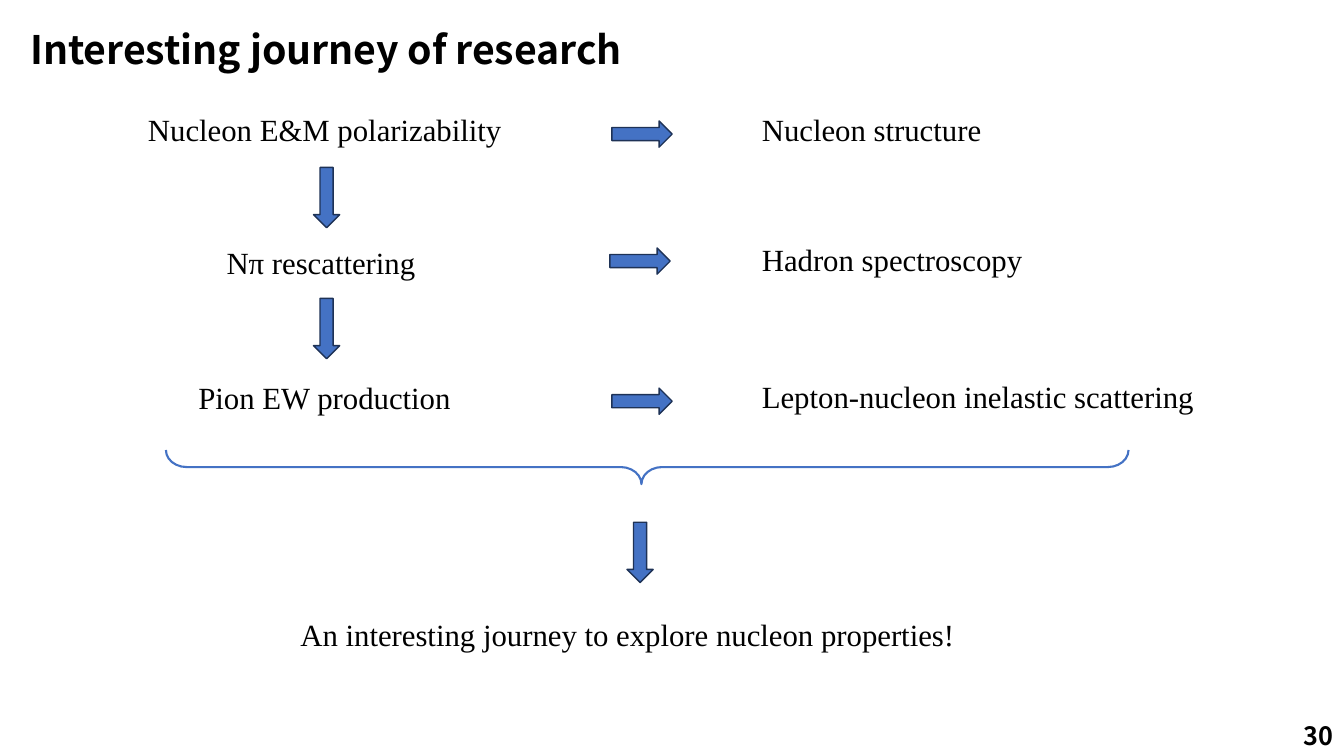
import pptx
import pptx.util
import pptx.dml.color
import pptx.enum.shapes
import pptx.enum.text
from dataclasses import dataclass

Cm, Pt = pptx.util.Cm, pptx.util.Pt
RGB = pptx.dml.color.RGBColor
MSO = pptx.enum.shapes.MSO_SHAPE
ALIGN = pptx.enum.text.PP_ALIGN
ANCHOR = pptx.enum.text.MSO_ANCHOR
AUTO = pptx.enum.text.MSO_AUTO_SIZE


@dataclass(frozen=True)
class Theme:
    ink: RGB = RGB(0x00, 0x00, 0x00)
    blue: RGB = RGB(0x44, 0x72, 0xC4)
    navy: RGB = RGB(0x1E, 0x32, 0x56)
    heading_font: str = "Noto Sans CJK SC"
    body_font: str = "Times New Roman"
    title_size: int = 28
    body_size: int = 22
    number_size: int = 18


theme = Theme()

prs = pptx.Presentation()
prs.slide_width, prs.slide_height = Cm(33.87), Cm(19.05)
s = prs.slides.add_slide(prs.slide_layouts[6])


def add_text(text, x, y, w, h=1.19, font=theme.body_font, size=theme.body_size,
             bold=False, wrap=False, align=ALIGN.LEFT, anchor=ANCHOR.TOP, spacing=None):
    tf = s.shapes.add_textbox(Cm(x), Cm(y), Cm(w), Cm(h)).text_frame
    tf.word_wrap = wrap
    tf.auto_size = AUTO.NONE if wrap else AUTO.SHAPE_TO_FIT_TEXT
    tf.vertical_anchor = anchor
    p = tf.paragraphs[0]
    p.alignment = align
    p.line_spacing = spacing
    r = p.add_run()
    r.text = text
    r.font.name, r.font.size, r.font.bold = font, Pt(size), bold
    r.font.color.rgb = theme.ink


def add_arrow(x, y, rotation=0):
    sp = s.shapes.add_shape(MSO.RIGHT_ARROW, Cm(x), Cm(y), Cm(1.52), Cm(0.66))
    sp.rotation = rotation
    sp.shadow.inherit = False
    sp.fill.solid()
    sp.fill.fore_color.rgb = theme.blue
    sp.line.color.rgb = theme.navy
    sp.line.width = Pt(1)


# Title
add_text("Interesting journey of research", 0.51, -0.03, 29.21, 2.69,
         font=theme.heading_font, size=theme.title_size, bold=True,
         wrap=True, anchor=ANCHOR.MIDDLE, spacing=0.9)

# Each row: topic (text, x, y, width), arrow (x, y), field (text, y, width)
rows = [
    (("Nucleon E&M polarizability", 3.48, 2.67, 9.53), (15.42, 3.05),
     ("Nucleon structure", 2.67, 6.1)),
    (("Nπ rescattering", 5.46, 6.02, 5.33), (15.37, 6.25),
     ("Hadron spectroscopy", 5.94, 7.14)),
    (("Pion EW production", 4.75, 9.42, 6.93), (15.42, 9.78),
     ("Lepton-nucleon inelastic scattering", 9.4, 11.46)),
]
for topic, arrow, (field, y, w) in rows:
    add_text(*topic)
    add_arrow(*arrow)
    add_text(field, 18.95, y, w)

# Downward arrows between topics and towards the conclusion
for x, y in [(7.47, 4.65), (7.47, 7.95), (15.37, 13.59)]:
    add_arrow(x, y, rotation=90)

# Brace gathering both columns
sp = s.shapes.add_shape(MSO.RIGHT_BRACE, Cm(15.88), Cm(-0.36), Cm(0.86), Cm(24.26))
sp.rotation = 90
sp.adjustments[0], sp.adjustments[1] = 0.604, 0.506
sp.shadow.inherit = False
sp.fill.background()
sp.line.color.rgb = theme.blue
sp.line.width = Pt(1.5)

# Conclusion
add_text("An interesting journey to explore nucleon properties!", 7.32, 15.39, 17.2)

# Slide number
add_text("30", 26.24, 18.03, 7.62, 1.02, font=theme.heading_font,
         size=theme.number_size, bold=True, wrap=True, align=ALIGN.RIGHT)

prs.save("out.pptx")
